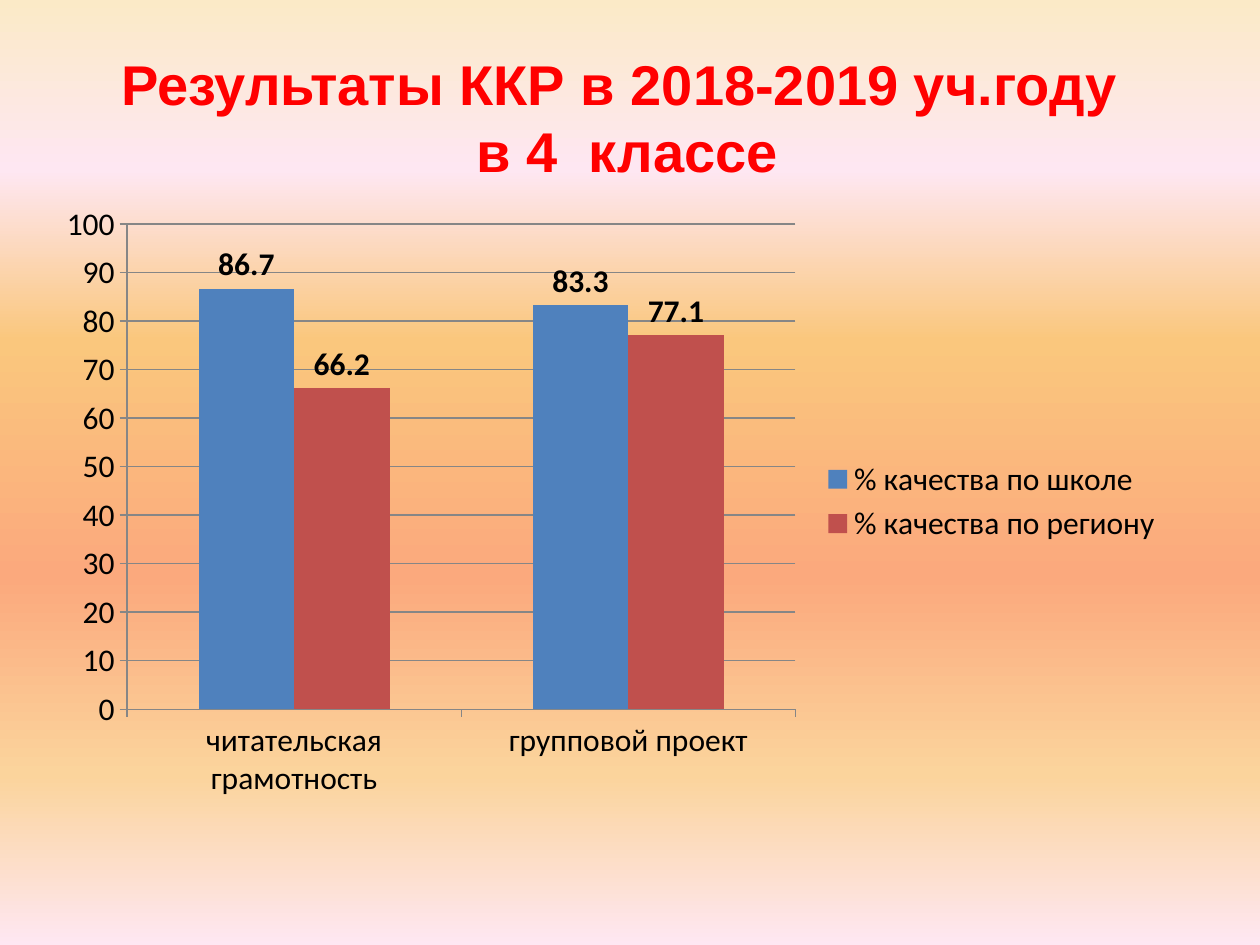
from lxml import etree
from pptx import Presentation
from pptx.chart.data import CategoryChartData
from pptx.dml.color import RGBColor
from pptx.enum.chart import XL_CHART_TYPE, XL_LABEL_POSITION, XL_LEGEND_POSITION, XL_TICK_MARK
from pptx.enum.text import MSO_ANCHOR, PP_ALIGN
from pptx.oxml.ns import qn
from pptx.util import Inches, Pt

COLUMNS = XL_CHART_TYPE.COLUMN_CLUSTERED
OUTSIDE_END = XL_LABEL_POSITION.OUTSIDE_END
LEGEND_RIGHT = XL_LEGEND_POSITION.RIGHT
TICK_OUT = XL_TICK_MARK.OUTSIDE
CENTER = PP_ALIGN.CENTER
MIDDLE = MSO_ANCHOR.MIDDLE

BACKGROUND_STOPS = [(0, "FBEAC7"), (18, "FEE7F2"), (36, "FAC77D"),
                    (61, "FBA97D"), (82, "FBD49C"), (100, "FEE7F2")]
SUBJECTS = ["читательская грамотность", "групповой проект"]
QUALITY = [("% качества по школе", (86.7, 83.3), "4F81BD"),
           ("% качества по региону", (66.2, 77.1), "C0504D")]


def color(hex_value):
    return RGBColor.from_string(hex_value)


def format_font(font, size=18, name="Calibri", fill="000000", bold=False):
    font.size, font.name, font.bold = Pt(size), name, bold
    font.color.rgb = color(fill)


def write_text(frame, text, align=CENTER, anchor=MIDDLE, **font_format):
    frame.word_wrap = True
    frame.vertical_anchor = anchor
    frame.text = text
    for paragraph in frame.paragraphs:
        paragraph.alignment = align
        for run in paragraph.runs:
            format_font(run.font, **font_format)


def paint_background(slide, stops):
    fill = slide.background.fill
    fill.gradient()
    fill.gradient_angle = 270  # top to bottom
    stop_list = next(slide.background._cSld.iter(qn("a:gsLst")))
    for old_stop in list(stop_list):
        stop_list.remove(old_stop)
    for percent, hex_value in stops:
        stop = etree.SubElement(stop_list, qn("a:gs"), pos=str(percent * 1000))
        etree.SubElement(stop, qn("a:srgbClr"), val=hex_value)


def place_title(slide, left, top, width, height):
    title = slide.shapes.title
    title.left, title.top, title.width, title.height = left, top, width, height
    write_text(title.text_frame, "Результаты ККР в 2018-2019 уч.году \vв 4  классе",
               size=32, name="Arial", fill="FF0000", bold=True)


def add_quality_chart(slide, left, top, width, height):
    results = CategoryChartData()
    results.categories = SUBJECTS
    for name, values, _ in QUALITY:
        results.add_series(name, values)
    chart = slide.shapes.add_chart(COLUMNS, left, top, width, height, results).chart
    format_font(chart.font)
    chart.has_title = False

    # Legend
    chart.has_legend = True
    chart.legend.position = LEGEND_RIGHT
    chart.legend.include_in_layout = False

    # Axes and gridlines
    for axis in (chart.category_axis, chart.value_axis):
        axis.major_tick_mark = TICK_OUT
        axis.format.line.color.rgb = color("868686")
    chart.value_axis.minimum_scale = 0
    chart.value_axis.maximum_scale = 100
    chart.value_axis.major_unit = 10
    chart.value_axis.has_major_gridlines = True
    chart.value_axis.major_gridlines.format.line.color.rgb = color("868686")

    # Columns with value labels
    plot = chart.plots[0]
    plot.gap_width = 150
    plot.overlap = 0
    plot.vary_by_categories = False
    for series, (_, _, hex_value) in zip(plot.series, QUALITY):
        series.format.fill.solid()
        series.format.fill.fore_color.rgb = color(hex_value)
        series.invert_if_negative = False
        labels = series.data_labels
        labels.show_value = True
        labels.position = OUTSIDE_END
        format_font(labels.font, bold=True)


def main():
    presentation = Presentation()
    presentation.slide_width, presentation.slide_height = Inches(10), Inches(7.5)
    slide = presentation.slides.add_slide(presentation.slide_layouts[5])
    paint_background(slide, BACKGROUND_STOPS)
    place_title(slide, Inches(0.48), Inches(0.3), Inches(9), Inches(1.25))
    add_quality_chart(slide, Inches(0.35), Inches(1.53), Inches(8.98), Inches(4.9))
    presentation.save("out.pptx")


if __name__ == "__main__":
    main()
